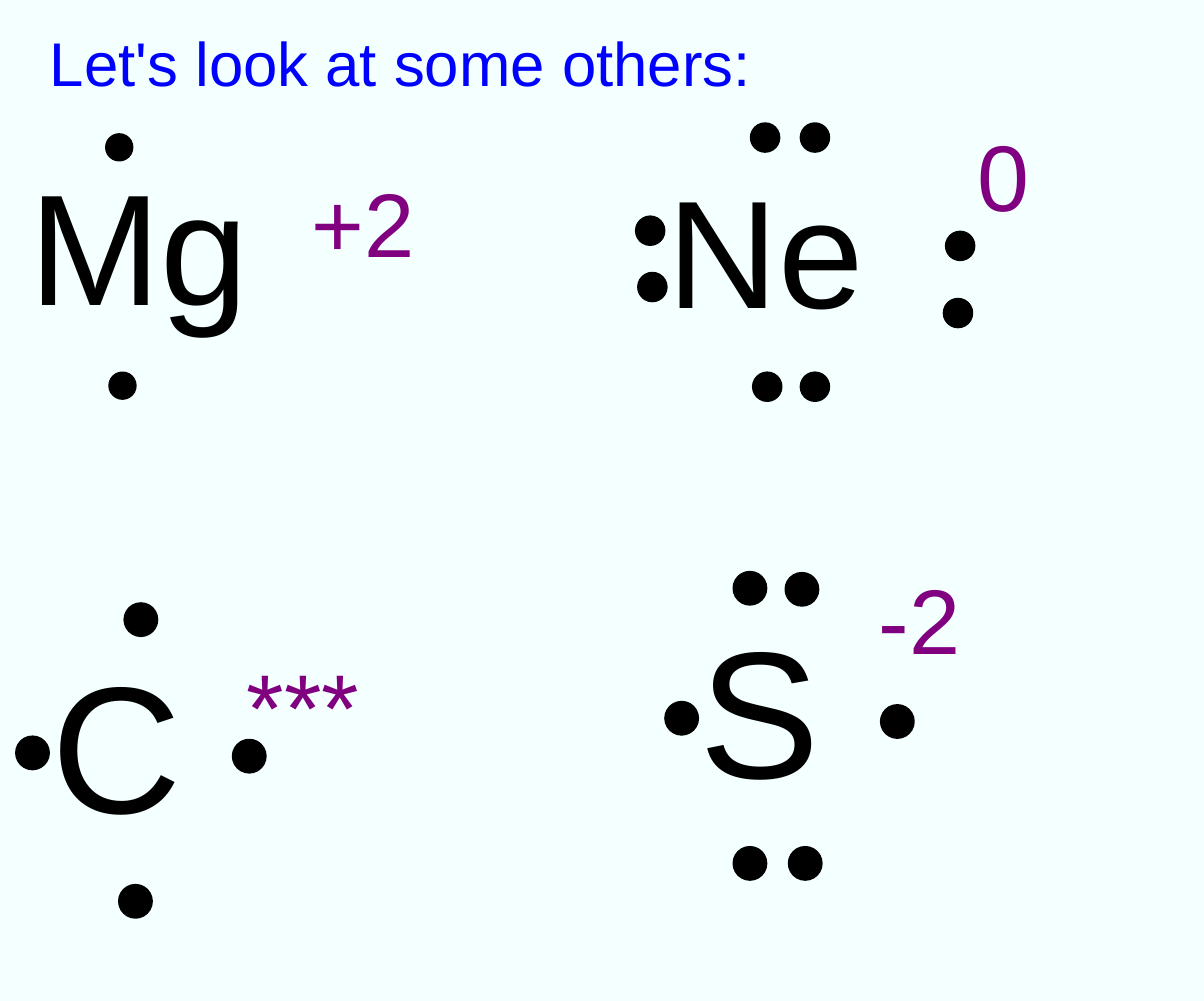
from pptx import Presentation
from pptx import util as u
from pptx.dml.color import RGBColor
from pptx.enum import shapes, text

PALE_CYAN = RGBColor(0xF4, 0xFF, 0xFF)
BLUE = RGBColor(0x00, 0x00, 0xFF)
BLACK = RGBColor(0x00, 0x00, 0x00)
PURPLE = RGBColor(0x80, 0x00, 0x80)

CELL = u.Inches(0.1)  # side of one square of the layout grid
COLUMNS, ROWS = 111.1, 92.4


def cells(*lengths):
    """Turn grid columns and rows into slide lengths."""
    return [u.Emu(round(length * CELL)) for length in lengths]


def write(box, wording, size, color):
    frame = box.text_frame
    frame.word_wrap = True
    frame.auto_size = text.MSO_AUTO_SIZE.SHAPE_TO_FIT_TEXT
    frame.vertical_anchor = text.MSO_ANCHOR.TOP
    line = frame.paragraphs[0]
    line.alignment = text.PP_ALIGN.LEFT
    run = line.add_run()
    run.text = wording
    run.font.name = "Arial"
    run.font.size = u.Pt(size)
    run.font.color.rgb = color


# symbol, its box and type size; dot diameter and dot corners;
# ion charge, its box and type size (boxes and dots in grid cells)
elements = [
    ("Mg", (1.7, 13.1, 28.5, 18.7), 105,
     2.2, [(9.9, 12.5), (10.2, 34.5)],
     "+2", (27.8, 14.9, 14.1, 11.1), 60),
    ("Ne", (60.6, 13.8, 25.6, 18.2), 102,
     2.4, [(69.4, 11.5), (74, 11.5), (87.4, 21.5), (87.2, 27.7),
           (74, 34.5), (69.6, 34.5), (59, 25.3), (58.8, 20.1)],
     "0", (89.2, 10.4, 7.8, 11.4), 62),
    ("C", (3.8, 57.9, 17.5, 21.2), 120,
     2.8, [(11.6, 55.8), (21.6, 68.4), (11.1, 81.8), (1.6, 68.1)],
     "***", (21.8, 59.2, 15.4, 11.8), 64),
    ("S", (63.6, 54.7, 16.3, 21.2), 120,
     2.8, [(67.8, 52.9), (72.6, 53), (81.4, 65.2),
           (72.9, 78.3), (67.8, 78.3), (61.5, 64.9)],
     "-2", (80.1, 51.5, 11.5, 11.3), 61),
]

deck = Presentation()
deck.slide_width, deck.slide_height = cells(COLUMNS, ROWS)
slide = deck.slides.add_slide(deck.slide_layouts[5])
slide.background.fill.solid()
slide.background.fill.fore_color.rgb = PALE_CYAN

title = slide.shapes.title
title.left, title.top, title.width, title.height = cells(3.6, 1.8, 89.5, 7.9)
write(title, "Let's look at some others:", 41, BLUE)

for (symbol, symbol_box, symbol_size, diameter, dots,
     charge, charge_box, charge_size) in elements:
    atom = slide.shapes.add_group_shape().shapes
    write(atom.add_textbox(*cells(*symbol_box)), symbol, symbol_size, BLACK)
    for column, row in dots:
        electron = atom.add_shape(shapes.MSO_SHAPE.OVAL,
                                  *cells(column, row, diameter, diameter))
        electron.shadow.inherit = False
        electron.fill.solid()
        electron.fill.fore_color.rgb = BLACK
        electron.line.color.rgb = BLACK
        electron.line.width = u.Pt(3)
    write(slide.shapes.add_textbox(*cells(*charge_box)), charge, charge_size, PURPLE)

deck.save("out.pptx")
